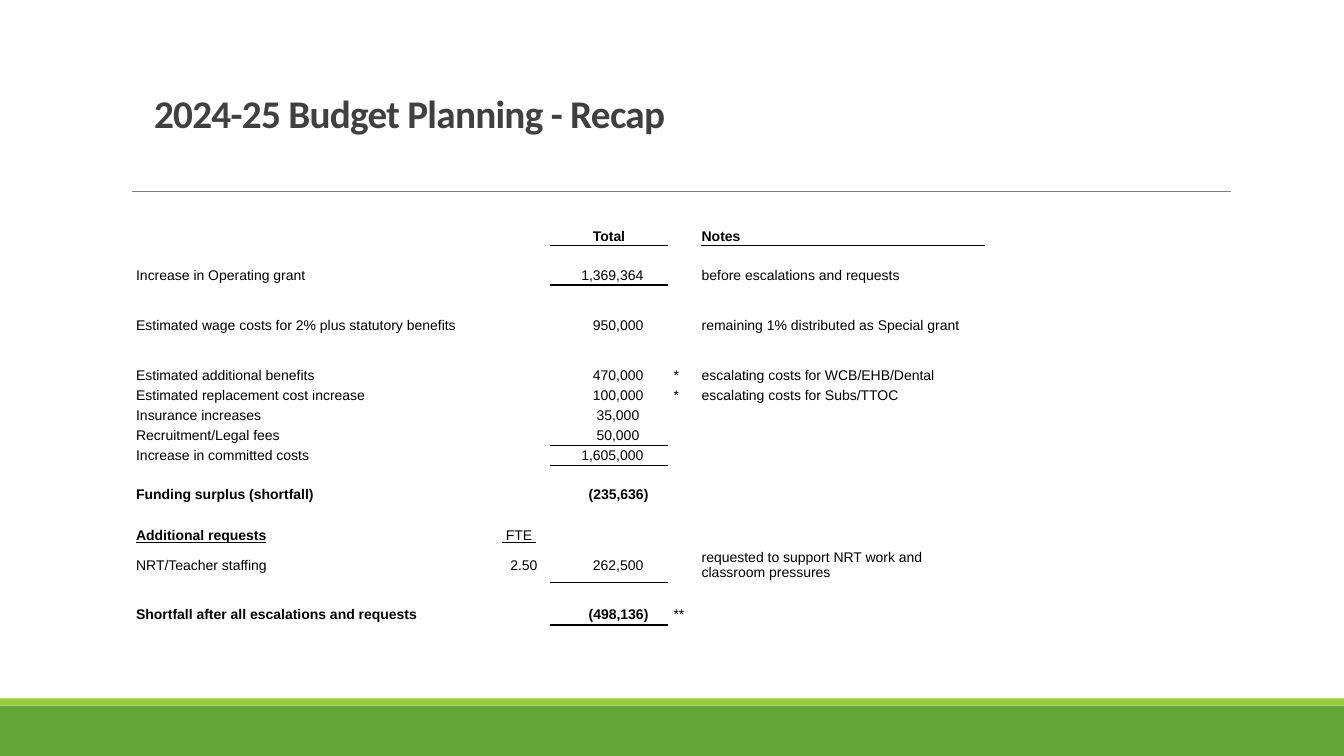
from lxml import etree
from pptx import Presentation
from pptx.dml.color import RGBColor
from pptx.enum.shapes import MSO_CONNECTOR, MSO_SHAPE
from pptx.enum.text import MSO_ANCHOR, PP_ALIGN
from pptx.oxml.ns import qn
from pptx.util import Inches, Pt

STRAIGHT, RECTANGLE = MSO_CONNECTOR.STRAIGHT, MSO_SHAPE.RECTANGLE
BOTTOM, MIDDLE = MSO_ANCHOR.BOTTOM, MSO_ANCHOR.MIDDLE
LEFT, CENTER, RIGHT = PP_ALIGN.LEFT, PP_ALIGN.CENTER, PP_ALIGN.RIGHT

BLACK = "000000"
NO_TABLE_STYLE = "{2D5ABB26-0587-4C30-8999-92F81FD0307C}"
EDGE, STAR_INDENT, FTE_INDENT = 0.01, 0.05, 0.12
THIN, THICK = 0.5, 2
TOTAL = 2

COLUMN_WIDTHS = [3.63, 0.48, 1.18, 0.32, 2.82]
ROW_HEIGHT = 0.2
SPECIAL_HEIGHTS = {0: 0.19, 4: 0.39, 11: 0.19, 12: 0.19, 13: 0.19,
                   14: 0.24, 15: 0.35, 17: 0.22}

# Item, FTE, total, mark, note; an empty list is a spacer row
BUDGET_ROWS = [
    ["", "", "Total", "", "Notes"],
    [],
    ["Increase in Operating grant", "", "1,369,364", "", "before escalations and requests"],
    [],
    ["Estimated wage costs for 2% plus statutory benefits", "", "950,000", "",
     "remaining 1% distributed as Special grant"],
    [],
    ["Estimated additional benefits", "", "470,000", "*", "escalating costs for WCB/EHB/Dental"],
    ["Estimated replacement cost increase", "", "100,000", "*", "escalating costs for Subs/TTOC"],
    ["Insurance increases", "", "35,000", "", ""],
    ["Recruitment/Legal fees", "", "50,000", "", ""],
    ["Increase in committed costs", "", "1,605,000", "", ""],
    [],
    ["Funding surplus (shortfall)", "", "(235,636)", "", ""],
    [],
    ["Additional requests", " FTE ", "", "", ""],
    ["NRT/Teacher staffing", "2.50", "262,500", "",
     "requested to support NRT work and classroom pressures"],
    [],
    ["Shortfall after all escalations and requests", "", "(498,136)", "**", ""],
]
BOLD_CELLS = {(0, 2), (0, 4), (12, 0), (12, 2), (14, 0), (17, 0), (17, 2)}
UNDERLINED_CELLS = {(14, 0), (14, 1)}
RULES = {(0, 2): THIN, (0, 4): THIN, (2, 2): THICK, (9, 2): THIN,
         (10, 2): THIN, (15, 2): THIN, (17, 2): THICK}


def color(value):
    return RGBColor.from_string(value)


def set_attributes(target, values):
    for name, value in values.items():
        setattr(target, name, value)


def add_span(para, text, hex_color, **font_format):
    span = para.add_run()
    span.text = text
    set_attributes(span.font, font_format)
    span.font.color.rgb = color(hex_color)
    return span


def add_band(page, top, height, fill):
    band = page.shapes.add_shape(RECTANGLE, 0, Inches(top), Inches(13.33), Inches(height))
    band.shadow.inherit = False
    band.fill.solid()
    band.fill.fore_color.rgb = color(fill)
    band.line.fill.background()


def add_divider(page, left, right, top):
    divider = page.shapes.add_connector(STRAIGHT, Inches(left), Inches(top),
                                        Inches(right), Inches(top))
    divider.line.color.rgb = color("808080")
    divider.line.width = Pt(0.5)
    properties = divider.element.find(qn("p:spPr"))
    etree.SubElement(properties, qn("a:effectLst"))


def add_title(page, text):
    box = page.shapes.add_textbox(Inches(1.43), Inches(0.58), Inches(7.62), Inches(0.82))
    set_attributes(box.text_frame, {"word_wrap": True, "vertical_anchor": BOTTOM})
    para = box.text_frame.paragraphs[0]
    para.line_spacing = 0.85
    span = add_span(para, text, "404040", name="Calibri", size=Pt(28), bold=True)
    span.font._element.set("spc", "-50")


def add_bottom_rule(cell, width):
    rule = etree.Element(qn("a:lnB"), w=str(Pt(width)))
    fill = etree.SubElement(rule, qn("a:solidFill"))
    etree.SubElement(fill, qn("a:srgbClr"), val=BLACK)
    cell._tc.get_or_add_tcPr().insert(0, rule)


def cell_layout(row, column, text):
    """Alignment, left margin and right margin of a cell."""
    if column == TOTAL and row == 0:
        return CENTER, EDGE, EDGE
    if column == TOTAL:
        if text.startswith("("):
            return RIGHT, EDGE, 0.2
        return RIGHT, EDGE, 0.29 if len(text) == 6 else 0.25
    if text == "2.50":
        return RIGHT, EDGE, FTE_INDENT
    return LEFT, STAR_INDENT if text.startswith("*") else EDGE, EDGE


def fill_cell(cell, row, column, text):
    alignment, left, right = cell_layout(row, column, text)
    set_attributes(cell, {
        "margin_left": Inches(left), "margin_right": Inches(right),
        "margin_top": Inches(EDGE), "margin_bottom": 0,
        "vertical_anchor": BOTTOM if row == 0 else MIDDLE,
    })
    cell.fill.background()
    para = cell.text_frame.paragraphs[0]
    para.alignment = alignment
    if text:
        add_span(para, text, BLACK, name="Arial", size=Pt(10),
                 bold=(row, column) in BOLD_CELLS,
                 underline=(row, column) in UNDERLINED_CELLS)
    else:
        # Small text size keeps empty rows at their set height
        etree.SubElement(para._p, qn("a:endParaRPr"), sz="800")
    if (row, column) in RULES:
        add_bottom_rule(cell, RULES[row, column])


def add_budget_table(page):
    heights = [SPECIAL_HEIGHTS.get(row, ROW_HEIGHT) for row in range(len(BUDGET_ROWS))]
    frame = page.shapes.add_table(len(heights), len(COLUMN_WIDTHS), Inches(1.34), Inches(2.24),
                                  Inches(sum(COLUMN_WIDTHS)), Inches(sum(heights)))
    table = frame.table
    set_attributes(table, {"first_row": False, "horz_banding": False})
    table._tbl.tblPr.find(qn("a:tableStyleId")).text = NO_TABLE_STYLE
    for column, width in zip(table.columns, COLUMN_WIDTHS):
        column.width = Inches(width)
    for row, (height, texts) in enumerate(zip(heights, BUDGET_ROWS)):
        table.rows[row].height = Inches(height)
        for column, text in enumerate(texts or [""] * len(COLUMN_WIDTHS)):
            fill_cell(table.cell(row, column), row, column, text)


def main():
    deck = Presentation()
    set_attributes(deck, {"slide_width": Inches(13.33), "slide_height": Inches(7.5)})
    page = deck.slides.add_slide(deck.slide_layouts[6])

    # Footer bands and title divider
    add_band(page, 7, 0.5, "63A537")
    add_band(page, 6.93, 0.07, "99CB38")
    add_divider(page, 1.31, 12.21, 1.9)

    # Title and budget figures
    add_title(page, "2024-25 Budget Planning - Recap")
    add_budget_table(page)
    deck.save("out.pptx")


if __name__ == "__main__":
    main()
